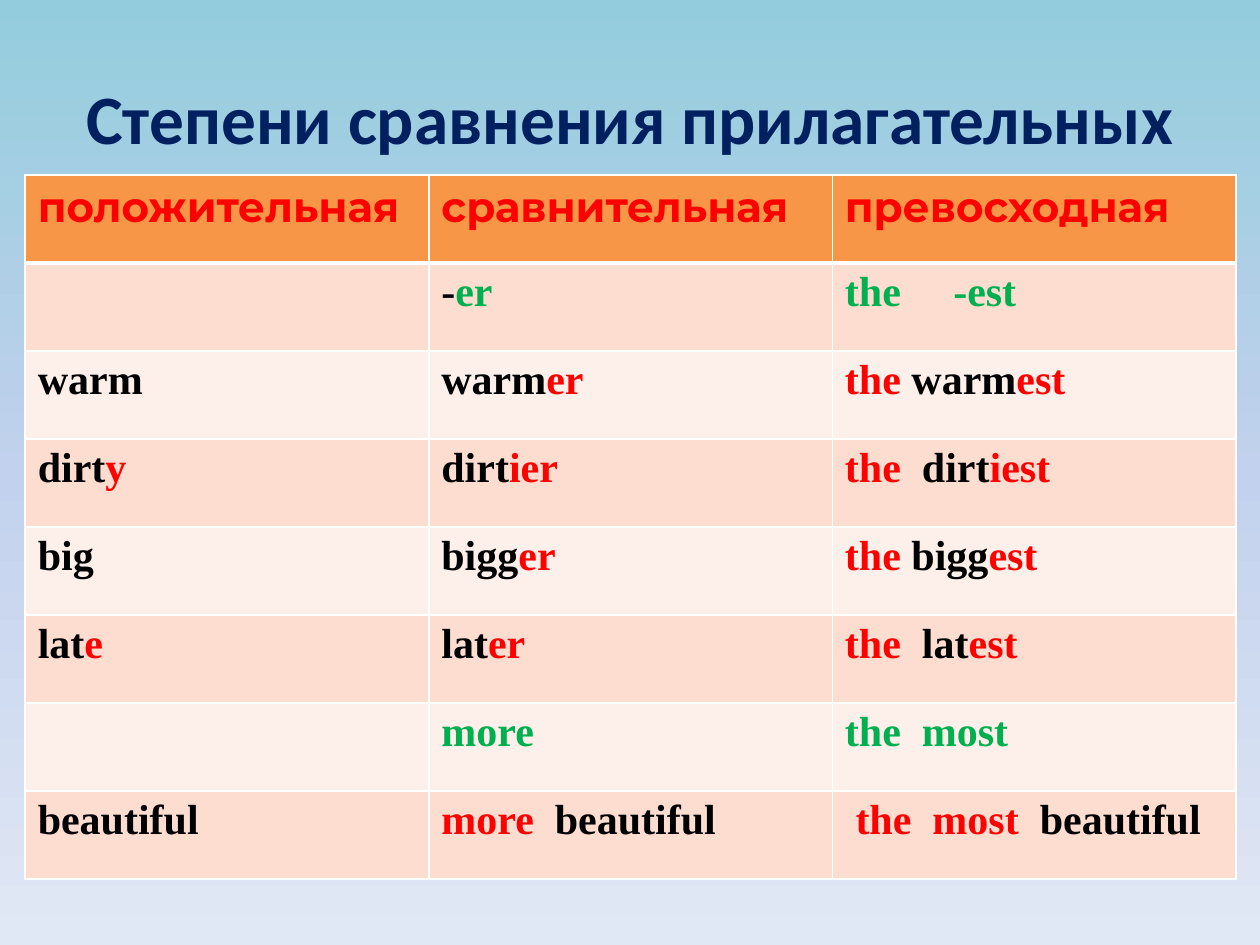
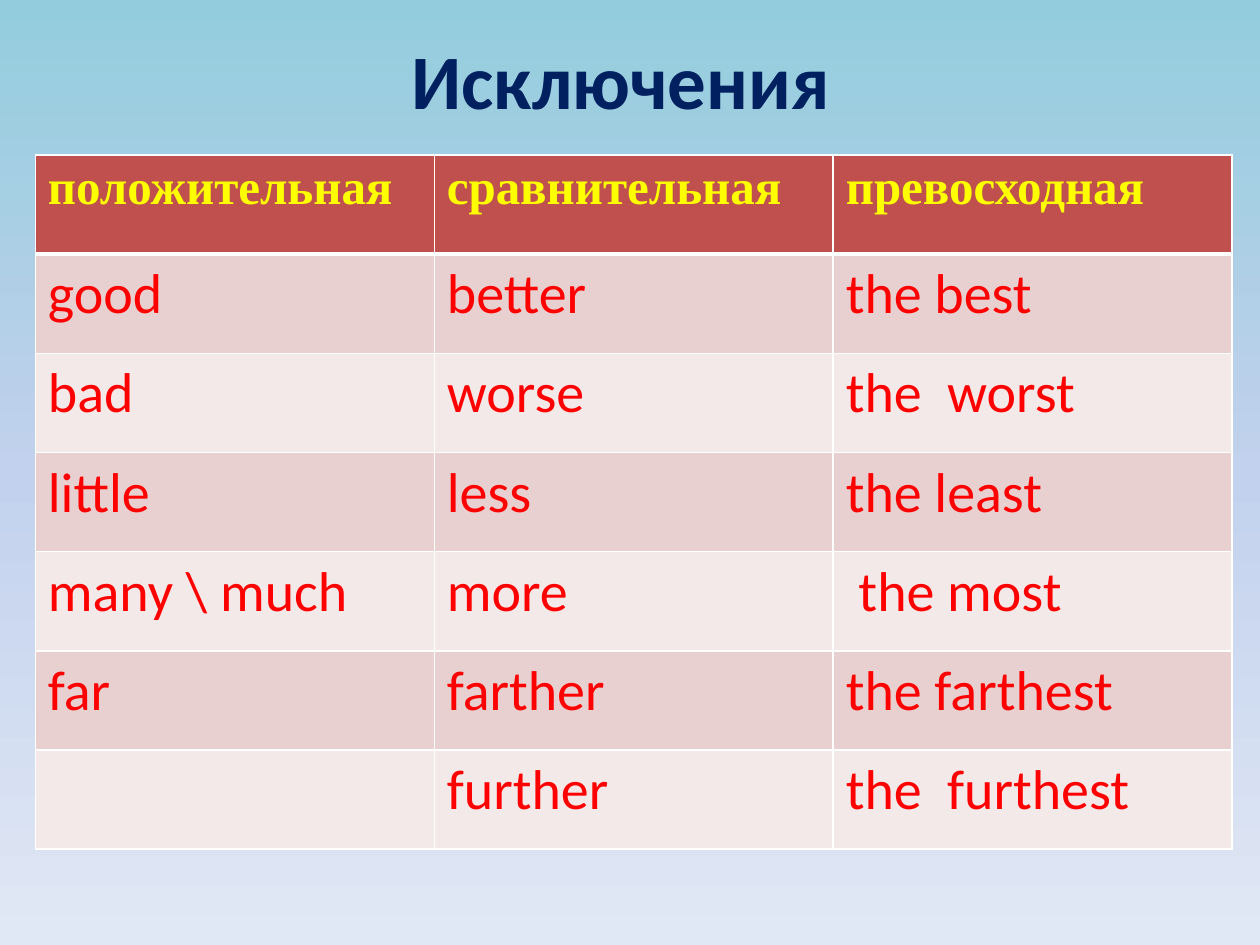
from dataclasses import dataclass

from lxml.etree import SubElement as add_element
from pptx import Presentation
from pptx.dml.color import RGBColor
from pptx.enum.text import MSO_ANCHOR as Anchor, PP_ALIGN as Align
from pptx.oxml.ns import qn
from pptx.util import Inches, Pt

SLIDE_W, SLIDE_H = Inches(10), Inches(7.5)
DEGREES = ["положительная", "сравнительная", "превосходная"]


@dataclass(frozen=True)
class Theme:
    sky: tuple = ((0, "93CDDD"), (50, "C2D1ED"), (100, "E1E8F5"))
    navy: str = "002060"
    red: str = "FF0000"
    green: str = "00B050"
    yellow: str = "FFFF00"
    black: str = "000000"
    white: str = "FFFFFF"
    orange_fills: tuple = ("F79646", "FCDDCF", "FDEFE9")
    brick_fills: tuple = ("C0504D", "E8D0D0", "F4E9E9")
    sans: str = "Calibri"
    serif: str = "Times New Roman"
    display: str = "Montserrat"
    long_title: float = 39.6
    short_title: float = 44
    rule: float = 1
    header_rule: float = 3


THEME = Theme()

# Asterisks enclose the accented part of a word
RULES = [
    (THEME.green, ["", "-*er*", "*the\t-est*"]),
    (THEME.red, ["warm", "warm*er*", "*the* warm*est*"]),
    (THEME.red, ["dirt*y*", "dirt*ier*", "*the*  dirt*iest*"]),
    (THEME.red, ["big", "bigg*er*", "*the* bigg*est*"]),
    (THEME.red, ["lat*e*", "lat*er*", "*the*  lat*est*"]),
    (THEME.green, ["", "*more*", "*the  most*"]),
    (THEME.red, ["beautiful", "*more*  beautiful", " *the  most*  beautiful"]),
]
EXCEPTIONS = [(THEME.red, words) for words in (
    ["good", "better", "the best"],
    ["bad", "worse", "the  worst"],
    ["little", "less", "the least"],
    ["many \\ much", "more", " the most"],
    ["far", "farther", "the farthest"],
    ["", "further", "the  furthest"],
)]


def share(left, top, width, height):
    """Turn percentages of the slide into a position and size."""
    return (int(SLIDE_W * left / 100), int(SLIDE_H * top / 100),
            int(SLIDE_W * width / 100), int(SLIDE_H * height / 100))


def write(frame, text, *, font, size, color, accent=None, bold=False,
          align=Align.LEFT):
    paragraph = frame.paragraphs[0]
    paragraph.alignment = align
    if "\t" in text:
        tabs = add_element(paragraph._p.get_or_add_pPr(), qn("a:tabLst"))
        add_element(tabs, qn("a:tab"), pos=str(Inches(0.86)), algn="l")
    for index, part in enumerate(text.split("*")):
        if part:
            run = paragraph.add_run()
            run.text = part
            run.font.name, run.font.size, run.font.bold = font, Pt(size), bold
            run.font.color.rgb = RGBColor.from_string(
                accent if index % 2 else color)


def paint_background(master):
    fill = master.background.fill
    fill.gradient()
    fill.gradient_angle = 270
    stops = master.element.find(".//" + qn("a:gsLst"))
    stops.clear()
    for percent, color in THEME.sky:
        stop = add_element(stops, qn("a:gs"), pos=str(percent * 1000))
        add_element(stop, qn("a:srgbClr"), val=color)


def add_title(slide, text, area, size):
    frame = slide.shapes.add_textbox(*share(*area)).text_frame
    frame.word_wrap = True
    frame.vertical_anchor = Anchor.MIDDLE
    write(frame, text, font=THEME.sans, size=size, color=THEME.navy,
          bold=True, align=Align.CENTER)


def rule_cell(cell, top, bottom):
    properties = cell._tc.get_or_add_tcPr()
    widths = {"lnL": THEME.rule, "lnR": THEME.rule, "lnT": top, "lnB": bottom}
    for side, width in widths.items():
        line = add_element(properties, qn("a:" + side), w=str(Pt(width)))
        fill = add_element(line, qn("a:solidFill"))
        add_element(fill, qn("a:srgbClr"), val=THEME.white)


def add_degrees_table(slide, rows, area, fills, header, body):
    all_rows = [(None, DEGREES)] + rows
    table = slide.shapes.add_table(len(all_rows), len(DEGREES),
                                   *share(*area)).table
    row_height = share(*area)[3] // len(all_rows)
    for r, (accent, words) in enumerate(all_rows):
        table.rows[r].height = row_height
        band = fills[0] if r == 0 else fills[1 + (r - 1) % 2]
        for c, word in enumerate(words):
            cell = table.cell(r, c)
            rule_cell(cell, THEME.header_rule if r == 1 else THEME.rule,
                      THEME.header_rule if r == 0 else THEME.rule)
            cell.fill.solid()
            cell.fill.fore_color.rgb = RGBColor.from_string(band)
            write(cell.text_frame, word, accent=accent,
                  **(body if r else header))


def main():
    deck = Presentation()
    deck.slide_width, deck.slide_height = SLIDE_W, SLIDE_H
    paint_background(deck.slide_master)
    blank = deck.slide_layouts[6]

    # Regular degrees of comparison
    regular = deck.slides.add_slide(blank)
    add_title(regular, "Степени сравнения прилагательных",
              (5, 4, 90, 16.67), THEME.long_title)
    add_degrees_table(
        regular, RULES, (2, 18.53, 96.1, 74.53), THEME.orange_fills,
        header=dict(font=THEME.display, size=24, color=THEME.red, bold=True),
        body=dict(font=THEME.serif, size=24, color=THEME.black, bold=True))

    # Exceptions
    irregular = deck.slides.add_slide(blank)
    add_title(irregular, "Исключения", (4.3, 0, 90, 16.67), THEME.short_title)
    add_degrees_table(
        irregular, EXCEPTIONS, (2.8, 16.4, 95, 73.47), THEME.brick_fills,
        header=dict(font=THEME.serif, size=28, color=THEME.yellow, bold=True),
        body=dict(font=THEME.sans, size=32, color=THEME.red))

    deck.save("out.pptx")


if __name__ == "__main__":
    main()
